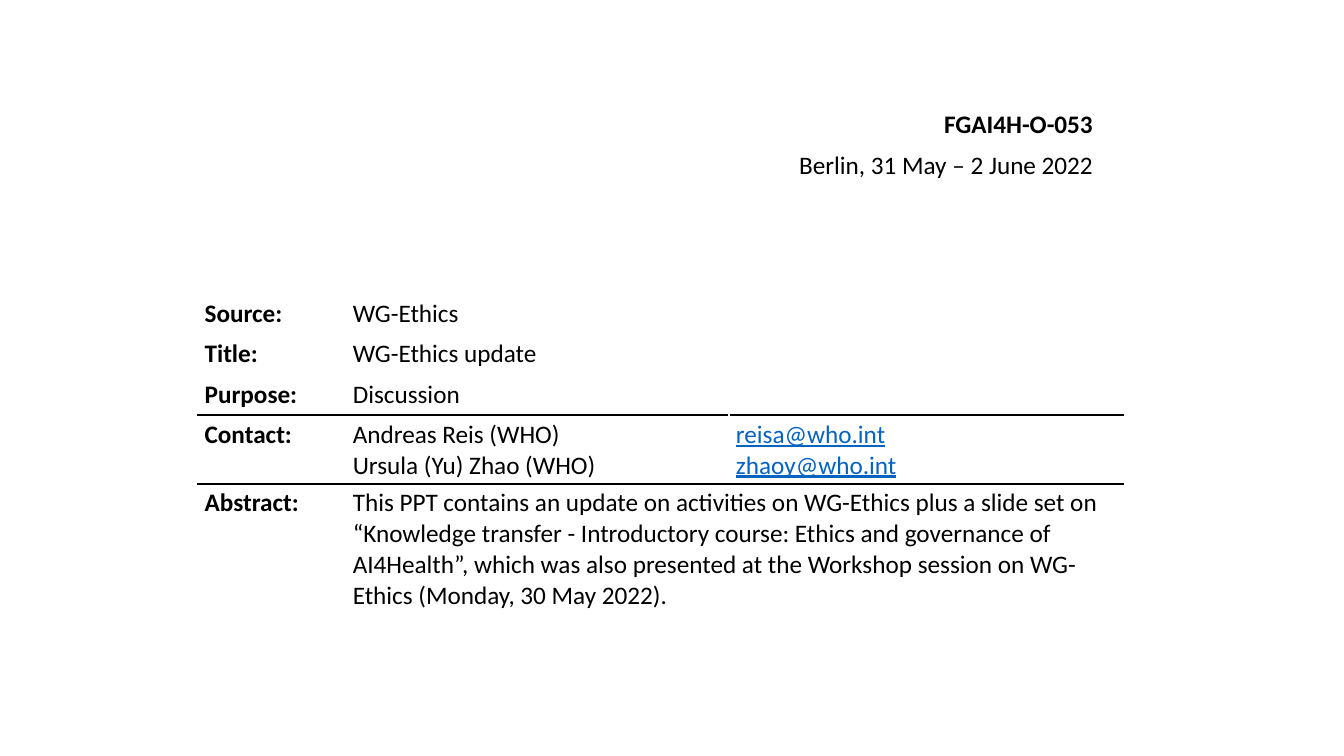
from lxml.etree import SubElement
from pptx import Presentation
from pptx.dml.color import RGBColor
from pptx.enum.text import MSO_ANCHOR, MSO_AUTO_SIZE, PP_ALIGN
from pptx.oxml.ns import qn
from pptx.util import Inches, Pt

BLACK = RGBColor(0x00, 0x00, 0x00)
LINK_BLUE = RGBColor(0x05, 0x63, 0xC1)

COL_WIDTHS = [1.47, 3.8, 3.91]
# Row height, label, then the lines of each content cell
ROWS = [
    (0.4, "Source:", [["WG-Ethics"]]),
    (0.4, "Title:", [["WG-Ethics update"]]),
    (0.4, "Purpose:", [["Discussion"]]),
    (0.67, "Contact:", [["Andreas Reis (WHO)", "Ursula (Yu) Zhao (WHO)"],
                        ["reisa@who.int", "zhaoy@who.int"]]),
    (1.28, "Abstract:", [[
        "This PPT contains an update on activities on WG-Ethics plus a slide "
        "set on “Knowledge transfer - Introductory course: Ethics and "
        "governance of AI4Health”, which was also presented at the Workshop "
        "session on WG-Ethics (Monday, 30 May 2022)."]]),
]
CONTACT_ROW = 3


def write_lines(p, lines, bold=False, color=BLACK, underline=False):
    for i, line in enumerate(lines):
        if i:
            p.add_line_break()
        p.add_run().text = line
    font = p.font
    font.name, font.size, font.bold = "Calibri", Pt(18), bold
    font.color.rgb, font.underline = color, underline


def format_heading(sp, left, top, width, text, bold=False):
    sp.left, sp.top = Inches(left), Inches(top)
    sp.width, sp.height = Inches(width), Inches(0.4)
    tf = sp.text_frame
    tf.word_wrap = False
    tf.auto_size = MSO_AUTO_SIZE.SHAPE_TO_FIT_TEXT
    tf.vertical_anchor = MSO_ANCHOR.TOP
    p = tf.paragraphs[0]
    p.alignment = PP_ALIGN.RIGHT
    p.line_spacing, p.space_before = 1.0, Pt(0)
    write_lines(p, [text], bold)


def add_border(cell, side):
    ln = SubElement(cell._tc.get_or_add_tcPr(), qn(f"a:ln{side}"), w=str(Pt(1.5)))
    fill = SubElement(ln, qn("a:solidFill"))
    SubElement(fill, qn("a:srgbClr"), val=str(BLACK))


def format_cell(cell, row):
    cell.margin_left = cell.margin_right = Inches(0.07)
    cell.margin_top = cell.margin_bottom = Inches(0.04)
    # Rules above and below the contact row
    if row in (CONTACT_ROW, CONTACT_ROW + 1):
        add_border(cell, "T")
    if row in (CONTACT_ROW - 1, CONTACT_ROW):
        add_border(cell, "B")
    cell.fill.background()


def add_details_table(s):
    heights = [row[0] for row in ROWS]
    table = s.shapes.add_table(
        len(ROWS), len(COL_WIDTHS), Inches(1.96), Inches(2.92),
        Inches(sum(COL_WIDTHS)), Inches(sum(heights))).table
    table.first_row = table.horz_banding = False
    for column, width in zip(table.columns, COL_WIDTHS):
        column.width = Inches(width)

    for r, (height, label, contents) in enumerate(ROWS):
        table.rows[r].height = Inches(height)
        for c in range(len(COL_WIDTHS)):
            format_cell(table.cell(r, c), r)
        if len(contents) == 1:
            table.cell(r, 1).merge(table.cell(r, 2))
        write_lines(table.cell(r, 0).text_frame.paragraphs[0], [label], bold=True)
        for c, lines in enumerate(contents, start=1):
            is_link = c == 2
            write_lines(table.cell(r, c).text_frame.paragraphs[0], lines,
                        color=LINK_BLUE if is_link else BLACK, underline=is_link)


def main():
    prs = Presentation()
    prs.slide_width, prs.slide_height = Inches(13.33), Inches(7.5)
    s = prs.slides.add_slide(prs.slide_layouts[5])

    # Document number and meeting
    format_heading(s.shapes.title, 9.25, 1.02, 1.69, "FGAI4H-O-053", bold=True)
    meeting = s.shapes.add_textbox(0, 0, 0, 0)
    format_heading(meeting, 7.79, 1.43, 3.15, "Berlin, 31 May – 2 June 2022")

    # Document details
    add_details_table(s)
    prs.save("out.pptx")


if __name__ == "__main__":
    main()
